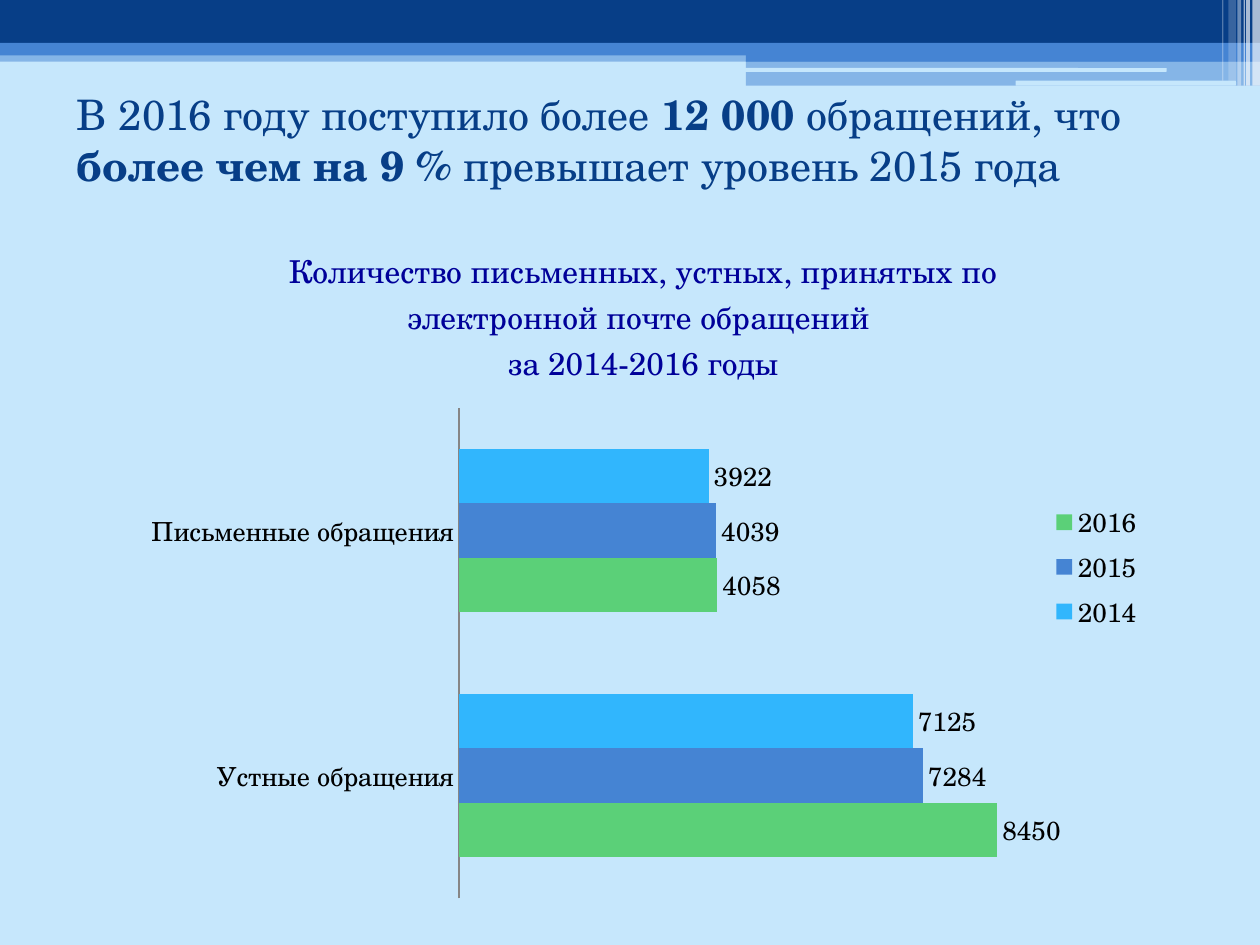
from lxml import etree
from pptx import Presentation
from pptx.chart.data import CategoryChartData
from pptx.dml.color import RGBColor
from pptx.enum.chart import XL_CHART_TYPE as Chart, XL_LABEL_POSITION as LabelPos
from pptx.enum.chart import XL_LEGEND_POSITION as LegendPos, XL_TICK_MARK as Tick
from pptx.enum.shapes import MSO_SHAPE as Shape
from pptx.enum.text import MSO_ANCHOR as Anchor, PP_ALIGN as Align
from pptx.oxml import parse_xml
from pptx.oxml.ns import nsdecls, qn
from pptx.util import Inches, Pt

FONT = "TeX Gyre Schola"
SKY, NAVY, BLUE, WHITE = "C6E7FC", "073E87", "4584D3", "FFFFFF"


def rgb(value):
    return RGBColor.from_string(value)


class SlideBuilder:
    def __init__(self, prs):
        self.slide = prs.slides.add_slide(prs.slide_layouts[5])
        fill = self.slide.background.fill
        fill.solid()
        fill.fore_color.rgb = rgb(SKY)

    def style(self, font, size, color, bold=False):
        font.name, font.size, font.bold = FONT, Pt(size), bold
        font.color.rgb = rgb(color)

    def band(self, box, color, opacity=100, rounded=False):
        kind = Shape.ROUNDED_RECTANGLE if rounded else Shape.RECTANGLE
        band = self.slide.shapes.add_shape(kind, *map(Inches, box))
        band.shadow.inherit = False
        band.line.fill.background()
        band.fill.solid()
        band.fill.fore_color.rgb = rgb(color)
        if opacity < 100:
            tint = band.fill._xPr.find(qn("a:solidFill"))[0]
            etree.SubElement(tint, qn("a:alpha")).set("val", str(opacity * 1000))

    def title(self, box, runs):
        title = self.slide.shapes.title
        title.left, title.top, title.width, title.height = map(Inches, box)
        frame = title.text_frame
        frame.word_wrap = True
        frame.vertical_anchor = Anchor.MIDDLE
        line = frame.paragraphs[0]
        line.alignment = Align.LEFT
        self.style(line.font, 24, NAVY)
        for text, bold in runs:
            run = line.add_run()
            run.text = text
            self.style(run.font, 24, NAVY, bold)
        # Keep the title in front of the bands
        self.slide.shapes._spTree.append(title._element)

    def bar_chart(self, box, heading, categories, series):
        data = CategoryChartData()
        data.categories = categories
        for name, values, _ in series:
            data.add_series(name, values)
        chart = self.slide.shapes.add_chart(
            Chart.BAR_CLUSTERED, *map(Inches, box), data).chart
        self.style(chart.font, 15, "000000")

        # Heading
        chart.has_title = True
        frame = chart.chart_title.text_frame
        frame.text = heading
        for line in frame.paragraphs:
            line.line_spacing = 1.2
            self.style(line.font, 18, "000099")
            for run in line.runs:
                self.style(run.font, 18, "000099")
        chart.chart_title.include_in_layout = False

        # Legend and axes
        chart.has_legend = True
        chart.legend.position = LegendPos.RIGHT
        chart.legend.include_in_layout = False
        groups, counts = chart.category_axis, chart.value_axis
        groups.reverse_order = True
        groups.major_tick_mark = Tick.NONE
        groups.format.line.color.rgb = rgb("868686")
        counts.has_major_gridlines = False
        counts.minimum_scale, counts.maximum_scale = 0, 9000
        counts.visible = False

        # Bars and their values
        plot = chart.plots[0]
        plot.gap_width, plot.overlap = 150, 0
        plot.vary_by_categories = False
        for bars, (_, _, color) in zip(plot.series, series):
            bars.format.fill.solid()
            bars.format.fill.fore_color.rgb = rgb(color)
            labels = bars.data_labels
            labels.show_value = True
            labels.position = LabelPos.OUTSIDE_END
        self.place_plot(chart, x=0.32, y=0.27, w=0.56, h=0.71)

    def place_plot(self, chart, **place):
        modes = '<c:layoutTarget val="inner"/><c:xMode val="edge"/><c:yMode val="edge"/>'
        sizes = "".join(f'<c:{key} val="{value}"/>' for key, value in place.items())
        area = chart._chartSpace.chart.plotArea
        for old in area.findall(qn("c:layout")):
            area.remove(old)
        area.insert(0, parse_xml(
            f'<c:layout {nsdecls("c")}><c:manualLayout>{modes}{sizes}'
            '</c:manualLayout></c:layout>'))


def main():
    prs = Presentation()
    prs.slide_width, prs.slide_height = Inches(10), Inches(7.5)
    page = SlideBuilder(prs)

    # Header bands
    page.band((0, 0.4, 10, 0.09), BLUE, 50)
    page.band((0, 0, 10, 0.34), NAVY)
    page.band((0, 0.34, 10, 0.1), BLUE)
    page.band((5.92, 0.39, 4.08, 0.1), BLUE)
    page.band((5.92, 0.48, 4.08, 0.2), BLUE, 50)
    page.band((5.91, 0.54, 3.35, 0.03), SKY, rounded=True)
    page.band((8.06, 0.64, 1.75, 0.04), SKY, rounded=True)

    # Light stripes in the corner: left, width, height, opacity
    for left, width, height, opacity in [
        (9.94, 0.06, 0.68, 65), (9.89, 0.03, 0.68, 65), (9.87, 0.01, 0.68, 60),
        (9.82, 0.03, 0.68, 40), (9.75, 0.06, 0.64, 20), (9.7, 0.01, 0.64, 30),
    ]:
        page.band((left, 0, width, height), WHITE, opacity)

    # Appeals by kind and year
    page.bar_chart(
        (1.04, 1.76, 8.13, 5.48),
        "Количество письменных, устных, принятых по электронной почте обращений \n"
        "за 2014-2016 годы",
        ["Письменные обращения", "Устные обращения"],
        [("2014", (3922, 7125), "31B6FD"),
         ("2015", (4039, 7284), BLUE),
         ("2016", (4058, 8450), "5BD078")])

    page.title((0.51, 0.52, 9, 1.17), [
        ("В 2016 году поступило более ", False),
        ("12 000 ", True),
        ("обращений, что ", False),
        ("более чем на 9 % ", True),
        ("превышает уровень 2015 года", False)])

    prs.save("out.pptx")


if __name__ == "__main__":
    main()
